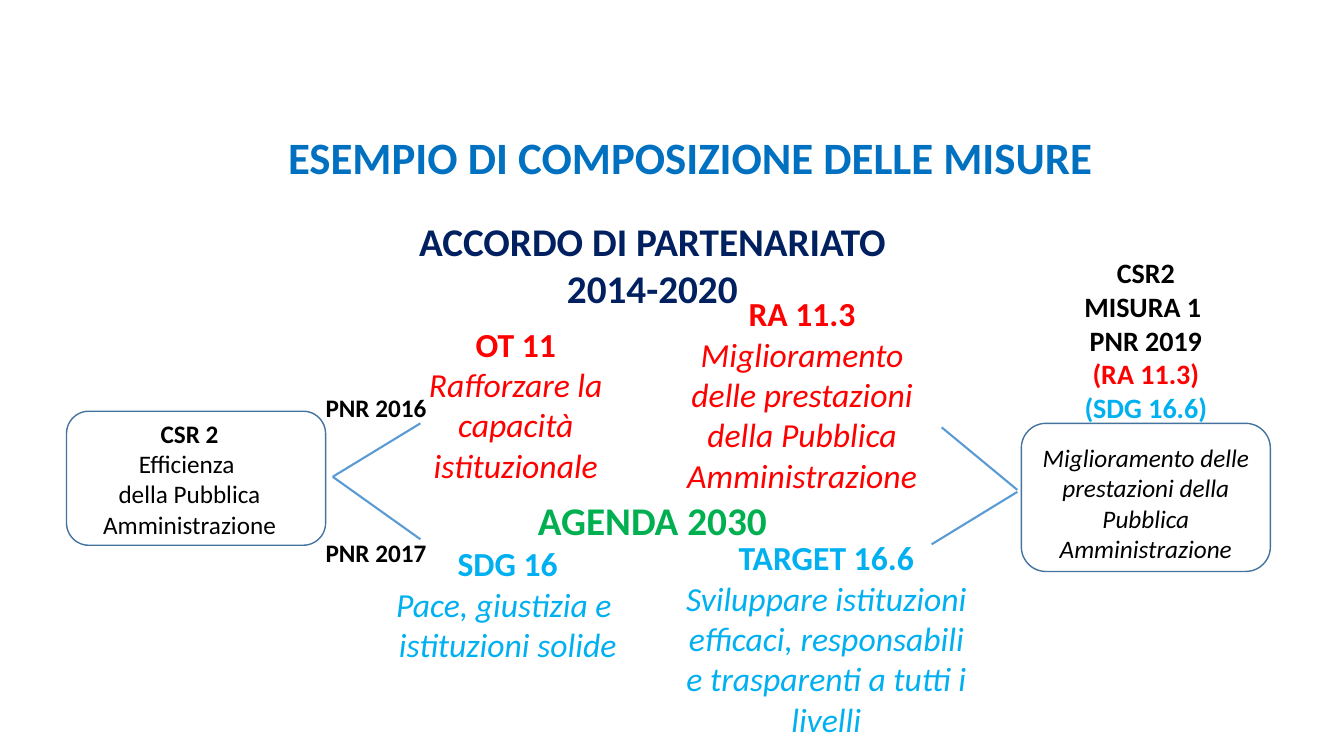
from dataclasses import dataclass

import pptx
import pptx.dml.color
import pptx.enum.shapes
import pptx.enum.text
import pptx.oxml
import pptx.oxml.ns
import pptx.util

Inches = pptx.util.Inches
ALIGN = pptx.enum.text.PP_ALIGN
SHAPE = pptx.enum.shapes.MSO_SHAPE


@dataclass(frozen=True)
class Theme:
    font: str = "Calibri"
    white: str = "FFFFFF"
    black: str = "000000"
    title: str = "0070C0"
    partnership: str = "002060"
    agenda: str = "00B050"
    objective: str = "FF0000"
    goal: str = "00B0F0"
    outline: str = "43739E"
    link: str = "5B9BD5"
    title_size: int = 32
    heading_size: int = 28
    topic_size: int = 24
    measure_size: int = 20
    card_size: int = 18
    outline_width: float = 1
    link_width: float = 1.5


@dataclass(frozen=True)
class Box:
    left: float
    top: float
    width: float
    height: float

    def inner(self, dx, dy, width, height):
        return Box(self.left + dx, self.top + dy, width, height)

    def lengths(self):
        return [Inches(v) for v in (self.left, self.top, self.width, self.height)]


THEME = Theme()


def rgb(value):
    return pptx.dml.color.RGBColor.from_string(value)


def line(text, color=THEME.black, **styles):
    return text, color, styles


def write(frame, lines, size, align=ALIGN.CENTER, wrap=True):
    frame.word_wrap = wrap
    frame.vertical_anchor = pptx.enum.text.MSO_ANCHOR.TOP
    for index, (text, color, styles) in enumerate(lines):
        paragraph = frame.paragraphs[0] if index == 0 else frame.add_paragraph()
        paragraph.alignment = align
        run = paragraph.add_run()
        run.text = text
        formats = {"name": THEME.font, "size": pptx.util.Pt(size), **styles}
        for attribute, value in formats.items():
            setattr(run.font, attribute, value)
        run.font.color.rgb = rgb(color)


def add_label(slide, box, lines, size, **layout):
    label = slide.shapes.add_textbox(*box.lengths())
    write(label.text_frame, lines, size, **layout)


def add_topic(slide, box, code, color, *descriptions):
    """Bold code above its description in italics."""
    lines = [line(code, color, bold=True)]
    lines += [line(text, color, italic=True) for text in descriptions]
    add_label(slide, box, lines, THEME.topic_size)


def add_link(slide, start, end):
    link = slide.shapes.add_connector(
        pptx.enum.shapes.MSO_CONNECTOR.STRAIGHT, *map(Inches, start + end))
    link.line.color.rgb = rgb(THEME.link)
    link.line.width = pptx.util.Pt(THEME.link_width)
    properties = link._element.spPr
    properties.append(pptx.oxml.parse_xml(
        "<a:effectLst %s/>" % pptx.oxml.ns.nsdecls("a")))


def add_card(slide, frame_box, text_box, lines):
    """White text panel grouped with a rounded outline."""
    card = slide.shapes.add_group_shape()
    panel = card.shapes.add_shape(SHAPE.RECTANGLE, *text_box.lengths())
    panel.fill.solid()
    panel.fill.fore_color.rgb = rgb(THEME.white)
    panel.line.fill.background()
    write(panel.text_frame, lines, THEME.card_size)
    outline = card.shapes.add_shape(SHAPE.ROUNDED_RECTANGLE, *frame_box.lengths())
    outline.fill.background()
    outline.line.color.rgb = rgb(THEME.outline)
    outline.line.width = pptx.util.Pt(THEME.outline_width)
    for part in (panel, outline):
        part.shadow.inherit = False


def add_title(slide, box):
    add_label(slide, box, [line("ESEMPIO DI COMPOSIZIONE DELLE MISURE ",
                                THEME.title, bold=True)], THEME.title_size)


def add_recommendation(slide, box):
    add_card(slide, box.inner(0, 0.24, 2.57, 1.33), box.inner(0.15, 0.26, 2.14, 1.44), [
        line("CSR 2", bold=True),
        line("Efficienza "),
        line("della Pubblica Amministrazione"),
    ])
    fork_x, fork_y = box.left + 2.64, box.top + 0.89
    for rise in (-0.53, 0.62):
        add_link(slide, (fork_x, fork_y), (box.left + box.width, fork_y + rise))
    for year, dy, width, wrap in (("2016", 0, 1.22, False), ("2017", 1.44, 1.32, True)):
        add_label(slide, box.inner(2.47, dy, width, 0.4),
                  [line(f"PNR {year}", bold=True)],
                  THEME.card_size, align=ALIGN.LEFT, wrap=wrap)


def add_partnership(slide, box):
    add_label(slide, box.inner(0, 0, 5.54, 1.04),
              [line(text, THEME.partnership, bold=True)
               for text in ("ACCORDO DI PARTENARIATO", "2014-2020")],
              THEME.heading_size)
    add_topic(slide, box.inner(0.44, 1.05, 1.95, 1.72), "OT 11", THEME.objective,
              "Rafforzare la capacità istituzionale")
    add_topic(slide, box.inner(2.86, 0.75, 2.79, 2.12), "RA 11.3", THEME.objective,
              "Miglioramento delle prestazioni della Pubblica Amministrazione")


def add_agenda(slide, box):
    add_label(slide, box.inner(0.95, 0, 3.44, 0.57),
              [line("AGENDA 2030", THEME.agenda, bold=True)], THEME.heading_size)
    add_topic(slide, box.inner(0, 0.47, 2.47, 1.31), "SDG 16", THEME.goal,
              "Pace, giustizia e ", "istituzioni solide")
    add_topic(slide, box.inner(2.87, 0.41, 3.05, 2.12), "TARGET 16.6", THEME.goal,
              "Sviluppare istituzioni efficaci, responsabili e trasparenti a tutti i livelli")


def add_measure(slide, box):
    add_card(slide, box.inner(0.89, 1.71, 2.47, 1.47), box.inner(0.89, 1.85, 2.47, 1.45), [
        line("Miglioramento delle prestazioni della Pubblica Amministrazione", italic=True),
    ])
    add_label(slide, box.inner(1.35, 0, 1.55, 1.78), [
        line("CSR2 MISURA 1 ", bold=True),
        line("PNR 2019", bold=True),
        line("(RA 11.3)", THEME.objective, bold=True),
        line("(SDG 16.6)", THEME.goal, bold=True),
    ], THEME.measure_size)
    for dx, dy, end_dy in ((0.1, 1.75, 2.37), (0, 2.91, 2.39)):
        add_link(slide, (box.left + dx, box.top + dy),
                 (box.left + 0.85, box.top + end_dy))


def main():
    deck = pptx.Presentation()
    deck.slide_width, deck.slide_height = Inches(13.33), Inches(7.5)
    slide = deck.slides.add_slide(deck.slide_layouts[6])
    add_recommendation(slide, Box(0.66, 3.84, 3.51, 1.84))
    add_partnership(slide, Box(3.7, 2.11, 5.65, 2.87))
    add_agenda(slide, Box(3.8, 4.87, 5.92, 2.53))
    add_measure(slide, Box(9.24, 2.49, 3.36, 3.3))
    add_title(slide, Box(1.37, 1.24, 11.06, 0.64))
    deck.save("out.pptx")


if __name__ == "__main__":
    main()
